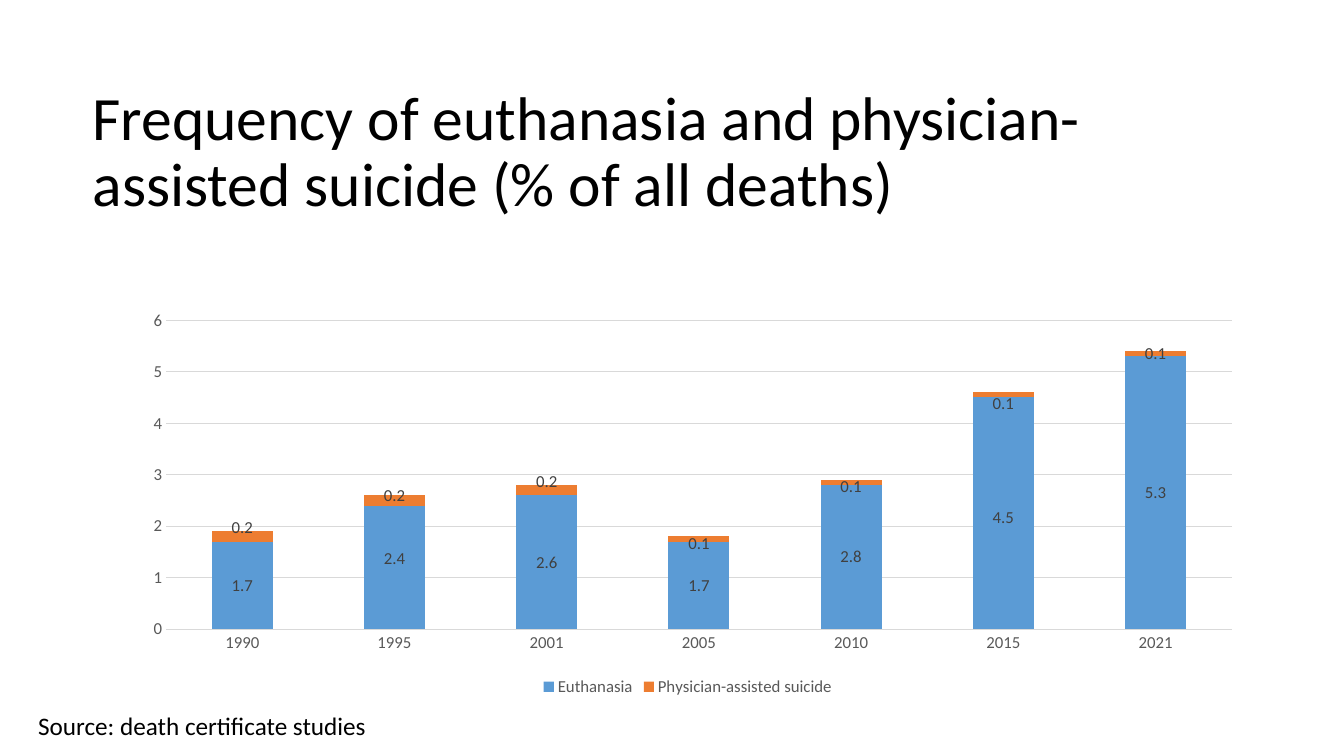
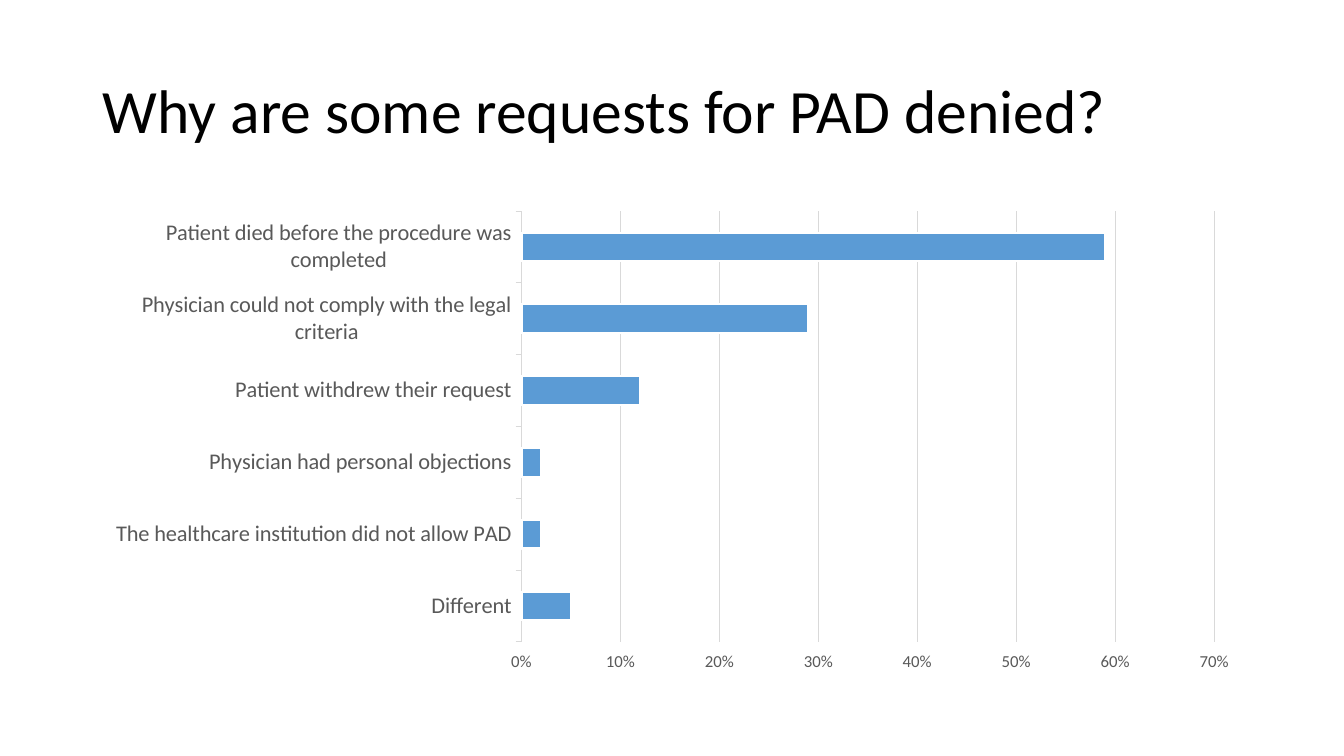
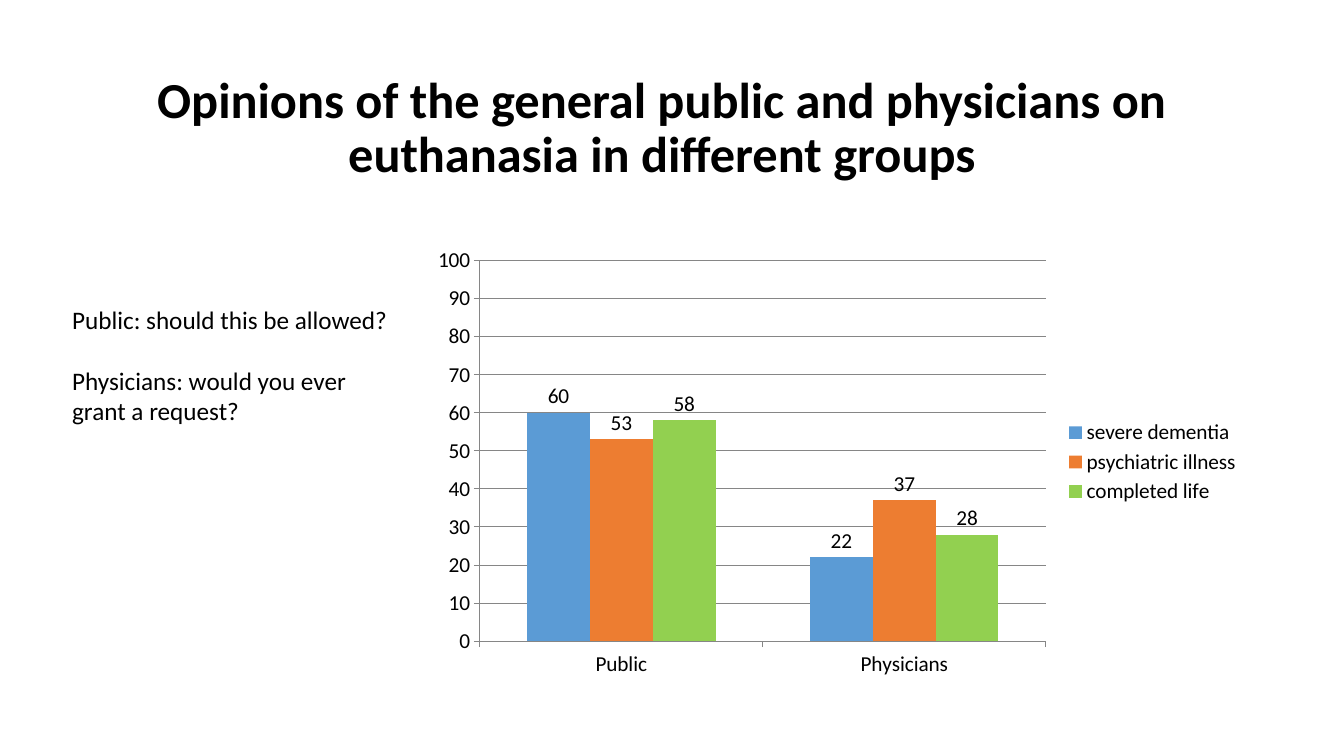
from lxml.etree import SubElement
from pptx import Presentation
from pptx.chart.data import CategoryChartData
from pptx.dml.color import RGBColor
from pptx.enum.chart import XL_CHART_TYPE, XL_LEGEND_POSITION, XL_TICK_MARK
from pptx.enum.text import MSO_ANCHOR, MSO_AUTO_SIZE, PP_ALIGN
from pptx.oxml.ns import qn
from pptx.util import Cm, Pt

FONT = "Calibri"
BLACK = RGBColor(0x00, 0x00, 0x00)
WHITE = RGBColor(0xFF, 0xFF, 0xFF)
DARK_GRAY = RGBColor(0x40, 0x40, 0x40)
GRAY = RGBColor(0x59, 0x59, 0x59)
MID_GRAY = RGBColor(0x86, 0x86, 0x86)
LIGHT_GRAY = RGBColor(0xD9, 0xD9, 0xD9)
BLUE = RGBColor(0x5B, 0x9B, 0xD5)
ORANGE = RGBColor(0xED, 0x7D, 0x31)
GREEN = RGBColor(0x92, 0xD0, 0x50)
TITLE_ONLY = 5


def style_font(font, size, color=BLACK, bold=False):
    font.name = FONT
    font.size = Pt(size)
    font.bold = bold
    font.color.rgb = color


def style_line(line, color, width=0.75):
    """Colour a line, or hide it when there is no colour."""
    if color is None:
        line.fill.background()
    else:
        line.color.rgb = color
        line.width = Pt(width)


def add_layout(parent, index, **values):
    """Place a manual chart layout among the children of parent."""
    layout = SubElement(parent, qn("c:layout"))
    manual = SubElement(layout, qn("c:manualLayout"))
    for name, value in values.items():
        SubElement(manual, qn(f"c:{name}")).set("val", str(value))
    parent.insert(index, layout)


class DeckBuilder:
    """Holds the shared style and the current slide."""

    def __init__(self):
        self.deck = Presentation()
        self.deck.slide_width = Cm(33.87)
        self.deck.slide_height = Cm(19.05)
        self.page = None

    def add_page(self, title, left, top, width, height, size=44, bold=False, align=PP_ALIGN.LEFT):
        self.page = self.deck.slides.add_slide(self.deck.slide_layouts[TITLE_ONLY])
        box = self.page.shapes.title
        box.left, box.top, box.width, box.height = Cm(left), Cm(top), Cm(width), Cm(height)
        frame = box.text_frame
        frame.text = title
        frame.auto_size = MSO_AUTO_SIZE.NONE
        frame.vertical_anchor = MSO_ANCHOR.MIDDLE
        para = frame.paragraphs[0]
        para.alignment = align
        para.line_spacing = 0.9
        style_font(para.font, size, bold=bold)

    def add_text(self, lines, left, top, width, height, gap=0):
        box = self.page.shapes.add_textbox(Cm(left), Cm(top), Cm(width), Cm(height))
        frame = box.text_frame
        frame.word_wrap = True
        frame.text = "\n".join(lines)
        for para in frame.paragraphs:
            para.space_after = Pt(gap)
            style_font(para.font, 18)

    def add_chart(self, kind, categories, series, colors, left, top, width, height,
                  size=12, color=BLACK, number_format="General", overlap=0):
        data = CategoryChartData(number_format=number_format)
        data.categories = categories
        for name, values in series.items():
            data.add_series(name, values)
        frame = self.page.shapes.add_chart(kind, Cm(left), Cm(top), Cm(width), Cm(height), data)
        chart = frame.chart
        chart.has_title = False
        chart.has_legend = False
        style_font(chart.font, size, color)
        plot = chart.plots[0]
        plot.gap_width = 150
        plot.overlap = overlap
        plot.vary_by_categories = False
        for item, fill in zip(plot.series, colors):
            item.format.fill.solid()
            item.format.fill.fore_color.rgb = fill
            item.invert_if_negative = False
        return chart

    def format_axes(self, chart, maximum, unit, tick, line, value_line, grid, number_format="General"):
        category, value = chart.category_axis, chart.value_axis
        for axis, axis_line in ((category, line), (value, value_line)):
            axis.major_tick_mark = tick
            axis.minor_tick_mark = XL_TICK_MARK.NONE
            style_line(axis.format.line, axis_line)
        category.has_major_gridlines = False
        value.has_major_gridlines = True
        style_line(value.major_gridlines.format.line, grid)
        value.minimum_scale, value.maximum_scale, value.major_unit = 0, maximum, unit
        value.tick_labels.number_format = number_format
        value.tick_labels.number_format_is_linked = False

    def add_legend(self, chart, position, size, color=BLACK):
        chart.has_legend = True
        chart.legend.position = position
        chart.legend.include_in_layout = False
        style_font(chart.legend.font, size, color)

    def add_labels(self, chart, size, color=BLACK):
        for series in chart.plots[0].series:
            series.data_labels.show_value = True
            style_font(series.data_labels.font, size, color)

    def shift_label(self, chart, series, point, y, size, color):
        """Move one data label by a share of the chart height."""
        label = chart.plots[0].series[series].points[point].data_label
        style_font(label.font, size, color)
        query = f".//c:ser[c:idx/@val='{series}']//c:dLbl[c:idx/@val='{point}']"
        add_layout(chart.element.xpath(query)[0], 1, x=0, y=y)

    def place_plot(self, chart, x, y, w, h):
        area = chart.element.xpath(".//c:plotArea")[0]
        for old in area.findall(qn("c:layout")):
            area.remove(old)
        add_layout(area, 0, layoutTarget="inner", xMode="edge", yMode="edge", x=x, y=y, w=w, h=h)


def add_frequency_page(builder):
    builder.add_page("Frequency of euthanasia and physician-assisted suicide (% of all deaths)",
                     2.08, 2.03, 29.21, 3.68)
    chart = builder.add_chart(
        XL_CHART_TYPE.COLUMN_STACKED,
        ["1990", "1995", "2001", "2005", "2010", "2015", "2021"],
        {"Euthanasia": [1.7, 2.4, 2.6, 1.7, 2.8, 4.5, 5.3],
         "Physician-assisted suicide": [0.2, 0.2, 0.2, 0.1, 0.1, 0.1, 0.1]},
        [BLUE, ORANGE], 3.35, 6.38, 27.97, 11.28, color=GRAY, overlap=100)
    builder.format_axes(chart, 6, 1, XL_TICK_MARK.NONE, LIGHT_GRAY, None, LIGHT_GRAY)
    builder.add_legend(chart, XL_LEGEND_POSITION.BOTTOM, 12, GRAY)
    builder.add_labels(chart, 12, DARK_GRAY)
    builder.place_plot(chart, 0.03, 0.15, 0.96, 0.69)
    # Labels moved clear of the thin upper segments
    shifts = [{1: -0.02, 5: 0.01},
              {0: -0.02, 1: -0.01, 2: -0.02, 3: 0.01, 4: 0.01, 5: 0.02}]
    for series, moves in enumerate(shifts):
        for point, y in moves.items():
            builder.shift_label(chart, series, point, y, 12, DARK_GRAY)
    builder.add_text(["Source: death certificate studies"], 0.71, 17.78, 32.56, 1.02)


def add_denial_page(builder):
    builder.add_page("Why are some requests for PAD denied?", 2.34, 1.02, 29.21, 3.68)
    reasons = {
        "Different": 0.05,
        "The healthcare institution did not allow PAD": 0.02,
        "Physician had personal objections": 0.02,
        "Patient withdrew their request": 0.12,
        "Physician could not comply with the legal criteria": 0.29,
        "Patient died before the procedure was completed": 0.59,
    }
    chart = builder.add_chart(
        XL_CHART_TYPE.BAR_CLUSTERED, list(reasons), {"Series 1": list(reasons.values())},
        [BLUE], 2.34, 5.08, 29.21, 12.09, color=GRAY, number_format="0%")
    builder.format_axes(chart, 0.7, 0.1, XL_TICK_MARK.OUTSIDE, LIGHT_GRAY, None, LIGHT_GRAY, "0%")
    style_font(chart.category_axis.tick_labels.font, 16, GRAY)
    style_line(chart.plots[0].series[0].format.line, WHITE, 1.5)


def add_opinion_page(builder):
    builder.add_page("Opinions of the general public and physicians on euthanasia in different groups",
                     1.57, 1.52, 30.23, 3.48, size=36, bold=True, align=PP_ALIGN.CENTER)
    chart = builder.add_chart(
        XL_CHART_TYPE.COLUMN_CLUSTERED, ["Public", "Physicians"],
        {"severe dementia": [60, 22], "psychiatric illness": [53, 37], "completed life": [58, 28]},
        [BLUE, ORANGE, GREEN], 10.62, 6.02, 20.9, 11.25, size=15.2)
    builder.format_axes(chart, 100, 10, XL_TICK_MARK.OUTSIDE, MID_GRAY, MID_GRAY, MID_GRAY)
    builder.add_legend(chart, XL_LEGEND_POSITION.RIGHT, 15.2)
    builder.add_labels(chart, 15.2)
    builder.add_text(["Public: should this be allowed?", "Physicians: would you ever grant a request?"],
                     1.57, 7.54, 8.76, 3.35, gap=22)


def main():
    builder = DeckBuilder()
    add_frequency_page(builder)
    add_denial_page(builder)
    add_opinion_page(builder)
    builder.deck.save("out.pptx")


if __name__ == "__main__":
    main()
